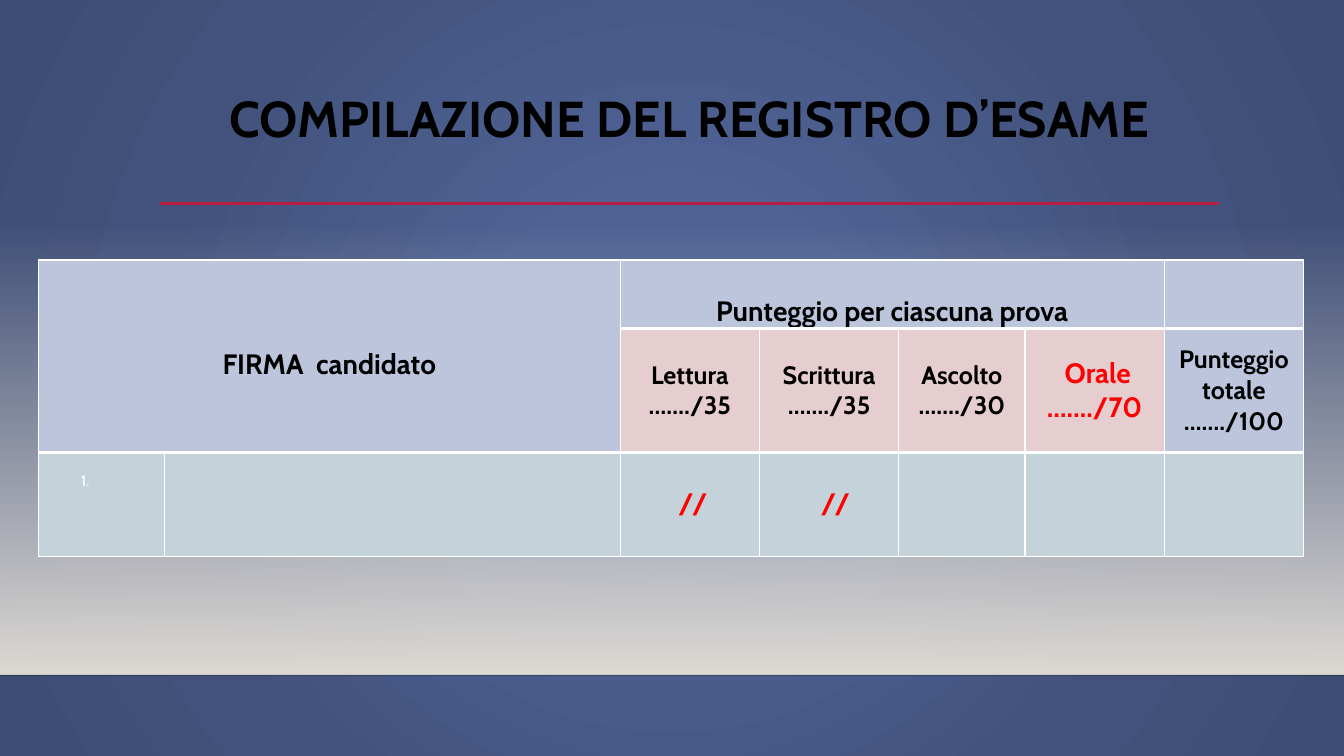
from lxml.etree import SubElement
from pptx import Presentation
from pptx.dml.color import RGBColor
from pptx.enum.shapes import MSO_CONNECTOR as Connector, MSO_SHAPE as Shape
from pptx.enum.text import MSO_ANCHOR as Anchor, PP_ALIGN as Align
from pptx.oxml import parse_xml
from pptx.oxml.ns import nsdecls, qn
from pptx.util import Cm, Pt

COLORS = {
    "black": "000000", "white": "FFFFFF", "red": "FF0000", "crimson": "B71E42",
    "floor": "DFDBD5", "edge": "000001", "header": "BCC5DC",
    "subheader": "E6CDCF", "body": "C3D3D9",
}
BACKDROP_STOPS = [(0, "4E6294", 100), (23, "4E6294", 100),
                  (69, "42527C", 100), (97, "3E4D74", 100)]
CIRCLE = '<a:path path="circle"><a:fillToRect l="50000" t="50000" r="50000" b="50000"/></a:path>'
DOWNWARD = '<a:lin ang="5400000" scaled="0"/>'
WIDTH, HEIGHT = 33.87, 19.05
COLUMNS = [3.18, 11.48, 3.51, 3.51, 3.18, 3.51, 3.51]
ROWS = [1.73, 3.12, 2.62]


def color(name):
    return RGBColor.from_string(COLORS[name])


class RegisterSlide:
    """Holds the shared text style and the slide being built."""

    style = {"name": "Cabin", "size": Pt(20), "bold": True}

    def __init__(self, presentation):
        self.slide = presentation.slides.add_slide(presentation.slide_layouts[6])

    def gradient(self, fill, owner, stops, direction):
        """Fill with (position, hex, opacity) stops along a direction element."""
        fill.gradient()
        plain = next(owner.iter(qn("a:gradFill")))
        marks = "".join(
            f'<a:gs pos="{position * 1000}"><a:srgbClr val="{value}">'
            f'<a:alpha val="{opacity * 1000}"/></a:srgbClr></a:gs>'
            for position, value, opacity in stops)
        plain.getparent().replace(plain, parse_xml(
            f'<a:gradFill {nsdecls("a")} rotWithShape="1">'
            f'<a:gsLst>{marks}</a:gsLst>{direction}</a:gradFill>'))

    def backdrop(self):
        self.gradient(self.slide.background.fill, self.slide.element, BACKDROP_STOPS, CIRCLE)

    def floor(self, top, height):
        shape = self.slide.shapes.add_shape(
            Shape.RECTANGLE, 0, Cm(top), Cm(WIDTH), Cm(height))
        shape.shadow.inherit = False
        shape.line.fill.background()
        stops = [(0, COLORS["floor"], 0), (100, COLORS["floor"], 100)]
        self.gradient(shape.fill, shape.element, stops, DOWNWARD)

    def rule(self, left, right, y, name, width, opacity=100):
        line = self.slide.shapes.add_connector(
            Connector.STRAIGHT, Cm(left), Cm(y), Cm(right), Cm(y))
        line.line.width = Pt(width)
        line.line.color.rgb = color(name)
        properties = line.element.spPr
        SubElement(next(properties.iter(qn("a:srgbClr"))), qn("a:alpha"),
                   val=str(opacity * 1000))
        SubElement(properties, qn("a:effectLst"))

    def add_text(self, paragraph, text, tint, spacing=1.0, align=Align.CENTER, **changes):
        paragraph.alignment = align
        paragraph.line_spacing = spacing
        run = paragraph.add_run()
        run.text = text
        for key, value in {**self.style, **changes}.items():
            setattr(run.font, key, value)
        run.font.color.rgb = color(tint)

    def title(self, text, left, top, width, height):
        frame = self.slide.shapes.add_textbox(
            Cm(left), Cm(top), Cm(width), Cm(height)).text_frame
        frame.word_wrap = True
        frame.vertical_anchor = Anchor.TOP
        self.add_text(frame.paragraphs[0], text, "black", 0.9, size=Pt(36))

    def table(self, left, top):
        frame = self.slide.shapes.add_table(
            len(ROWS), len(COLUMNS), Cm(left), Cm(top), Cm(sum(COLUMNS)), Cm(sum(ROWS)))
        table = frame.table
        for column, width in zip(table.columns, COLUMNS):
            column.width = Cm(width)
        for row, height in zip(table.rows, ROWS):
            row.height = Cm(height)
        for row in range(len(ROWS)):
            for column in range(len(COLUMNS)):
                is_score = row == 1 and 2 <= column <= 5
                fill = "body" if row == 2 else "subheader" if is_score else "header"
                self.cell(table.cell(row, column), fill, row)
        return table

    def cell(self, cell, fill, row):
        cell.fill.solid()
        cell.fill.fore_color.rgb = color(fill)
        cell.margin_left = cell.margin_right = Cm(0.18)
        cell.margin_top = cell.margin_bottom = 0
        cell.vertical_anchor = Anchor.MIDDLE if row == 1 else Anchor.TOP
        widths = {"L": 1, "R": 1, "T": 3 if row else 1, "B": 3 if row < 2 else 1}
        properties = cell._tc.get_or_add_tcPr()
        for index, (side, width) in enumerate(widths.items()):
            properties.insert(index, parse_xml(
                f'<a:ln{side} {nsdecls("a")} w="{Pt(width)}"><a:solidFill>'
                f'<a:srgbClr val="{COLORS["white"]}"/></a:solidFill></a:ln{side}>'))

    def fill_cell(self, cell, lines, tint="black", **changes):
        frame = cell.text_frame
        for index, text in enumerate(lines):
            paragraph = frame.add_paragraph() if index else frame.paragraphs[0]
            self.add_text(paragraph, text, tint, **changes)

    def number_cell(self, cell):
        """Start the numbered list of candidates."""
        paragraph = cell.text_frame.paragraphs[0]
        self.add_text(paragraph, " ", "white", 2.0, Align.LEFT, size=Pt(11), bold=False)
        properties = paragraph._p.get_or_add_pPr()
        properties.set("marL", str(Cm(1.52)))
        properties.set("indent", str(Cm(-0.63)))
        SubElement(properties, qn("a:buFont"), typeface="+mj-lt")
        SubElement(properties, qn("a:buAutoNum"), type="arabicPeriod")


def main():
    presentation = Presentation()
    presentation.slide_width, presentation.slide_height = Cm(WIDTH), Cm(HEIGHT)
    page = RegisterSlide(presentation)
    page.backdrop()
    page.floor(5.61, 11.4)
    page.rule(0, WIDTH, 17.02, "edge", 1, opacity=20)
    page.rule(4.04, 30.73, 5.13, "crimson", 2.5)
    page.title("COMPILAZIONE DEL REGISTRO D’ESAME", 4.04, 2.24, 26.67, 2.92)

    table = page.table(0.97, 6.55)
    signature, scores = table.cell(0, 0), table.cell(0, 2)
    signature.merge(table.cell(1, 1))
    scores.merge(table.cell(0, 5))
    signature.margin_top = Cm(1.35)
    page.fill_cell(signature, ["FIRMA  candidato"], spacing=2.0)
    page.fill_cell(scores, ["Punteggio per ciascuna prova"], spacing=2.0)

    tests = [("Lettura", 35), ("Scrittura", 35), ("Ascolto", 30)]
    for column, (test, points) in enumerate(tests, start=2):
        page.fill_cell(table.cell(1, column), [test, f"……./{points}"], size=Pt(18))
    page.fill_cell(table.cell(1, 5), [" Orale ……./70"], "red")
    page.fill_cell(table.cell(1, 6), ["Punteggio totale", "……./100"], size=Pt(18))

    page.number_cell(table.cell(2, 0))
    for column, mark in [(2, " //"), (3, "  //")]:
        page.fill_cell(table.cell(2, column), [mark], "red", spacing=2.0)
    presentation.save("out.pptx")


if __name__ == "__main__":
    main()
